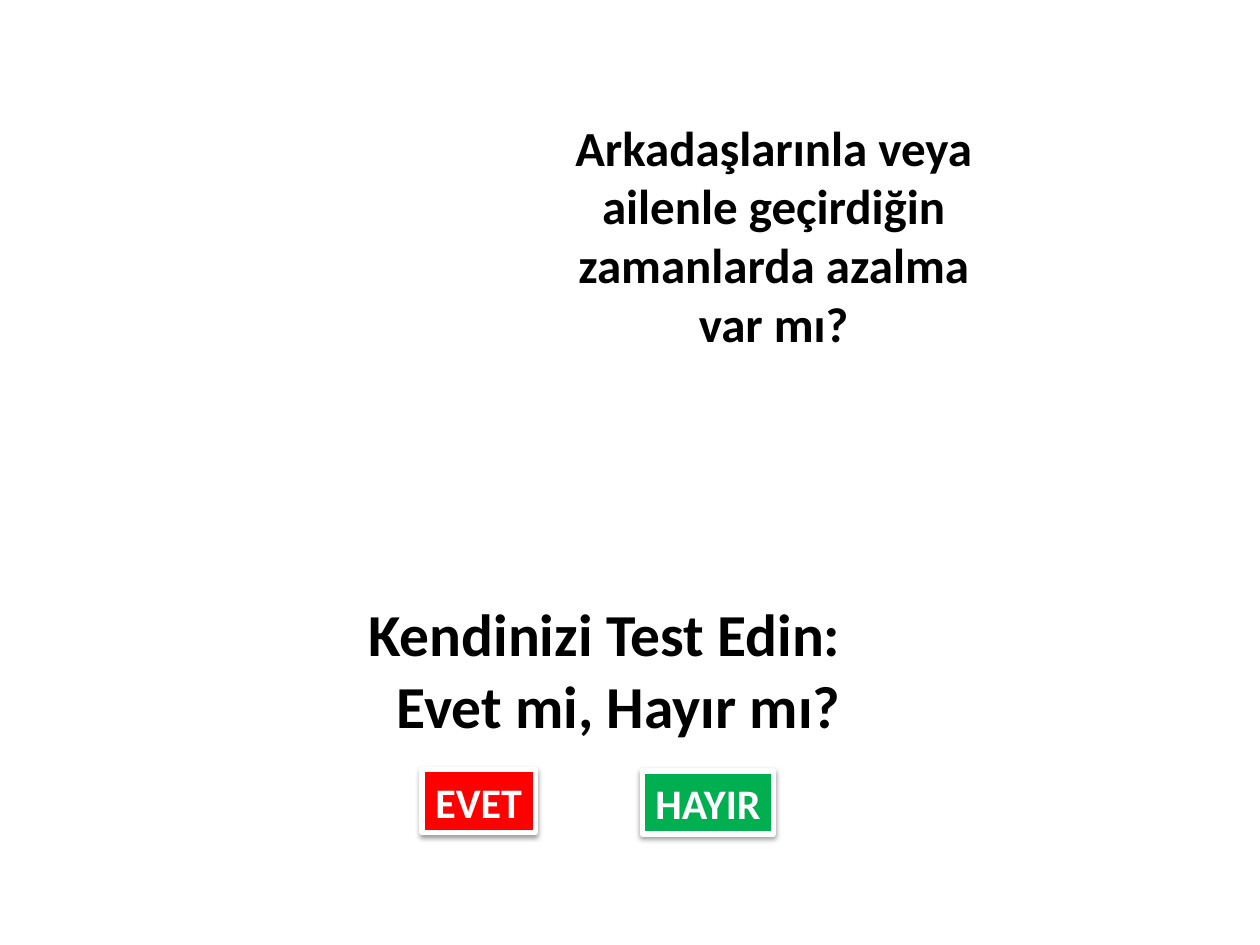
from lxml import etree
from pptx import Presentation
from pptx.dml.color import RGBColor
from pptx.enum.shapes import MSO_SHAPE
from pptx.enum.text import MSO_ANCHOR, MSO_AUTO_SIZE, PP_ALIGN
from pptx.oxml.ns import qn
from pptx.util import Inches, Pt

RECT = MSO_SHAPE.RECTANGLE
TOP, MIDDLE = MSO_ANCHOR.TOP, MSO_ANCHOR.MIDDLE
FIT = MSO_AUTO_SIZE.SHAPE_TO_FIT_TEXT
CENTER, RIGHT = PP_ALIGN.CENTER, PP_ALIGN.RIGHT
TITLE_ONLY = 5
COLS, ROWS = 20, 15  # half-inch grid


def tint(code):
    return RGBColor.from_string(code)


class Deck:
    """Holds the style and the current slide."""
    ink, paper, face = "000000", "FFFFFF", "Calibri"

    def __init__(self):
        self.prs = Presentation()
        self.prs.slide_width, self.prs.slide_height = Inches(10), Inches(7.5)
        self.slide = self.prs.slides.add_slide(self.prs.slide_layouts[TITLE_ONLY])

    def area(self, col, row, wide, high):
        x, y = self.prs.slide_width / COLS, self.prs.slide_height / ROWS
        return [round(n) for n in (col * x, row * y, wide * x, high * y)]

    def label(self, shape, lines, size, color, align, **form):
        frame = shape.text_frame
        for key, value in {"word_wrap": True, "vertical_anchor": TOP,
                           "auto_size": FIT, **form}.items():
            setattr(frame, key, value)
        frame.text = "\n".join(lines)
        style = {"name": self.face, "size": Pt(size), "bold": True}
        for para in frame.paragraphs:
            para.alignment = align
            for run in para.runs:
                for key, value in style.items():
                    setattr(run.font, key, value)
                run.font.color.rgb = tint(color)

    def title(self, text, area, size):
        shape = self.slide.shapes.title
        shape.left, shape.top, shape.width, shape.height = self.area(*area)
        self.label(shape, [text], size, self.ink, RIGHT)

    def text(self, lines, area, size):
        box = self.slide.shapes.add_textbox(*self.area(*area))
        self.label(box, lines, size, self.ink, CENTER)

    def button(self, text, area, fill, size=24):
        shape = self.slide.shapes.add_shape(RECT, *self.area(*area))
        shape.fill.solid()
        shape.fill.fore_color.rgb = tint(fill)
        shape.line.color.rgb = tint(self.paper)
        shape.line.width = Pt(3)
        self.shade(shape)
        self.label(shape, [text], size, self.paper, CENTER,
                   word_wrap=False, vertical_anchor=MIDDLE)

    def shade(self, shape):
        shape.shadow.inherit = False
        effects = shape.element.spPr.find(qn("a:effectLst"))
        outer = etree.SubElement(effects, qn("a:outerShdw"), blurRad=str(Pt(3.1)),
                                 dist=str(Pt(1.6)), dir="5400000", rotWithShape="0")
        color = etree.SubElement(outer, qn("a:srgbClr"), val=self.ink)
        etree.SubElement(color, qn("a:alpha"), val="38000")


def main():
    deck = Deck()
    # Heading
    deck.title("Kendinizi Test Edin: Evet mi, Hayır mı?", (4.8, 9.38, 8.74, 2.5), 34)
    # Answer buttons
    deck.button("EVET", (6.7, 12.22, 1.8, 1), "FF0000")
    deck.button("HAYIR", (10.2, 12.24, 2.08, 1), "00B050")
    # Question
    deck.text(["Arkadaşlarınla veya", "ailenle geçirdiğin",
               "zamanlarda azalma", "var mı?"], (7.28, 1.76, 10, 3.98), 28)
    deck.prs.save("out.pptx")


if __name__ == "__main__":
    main()
